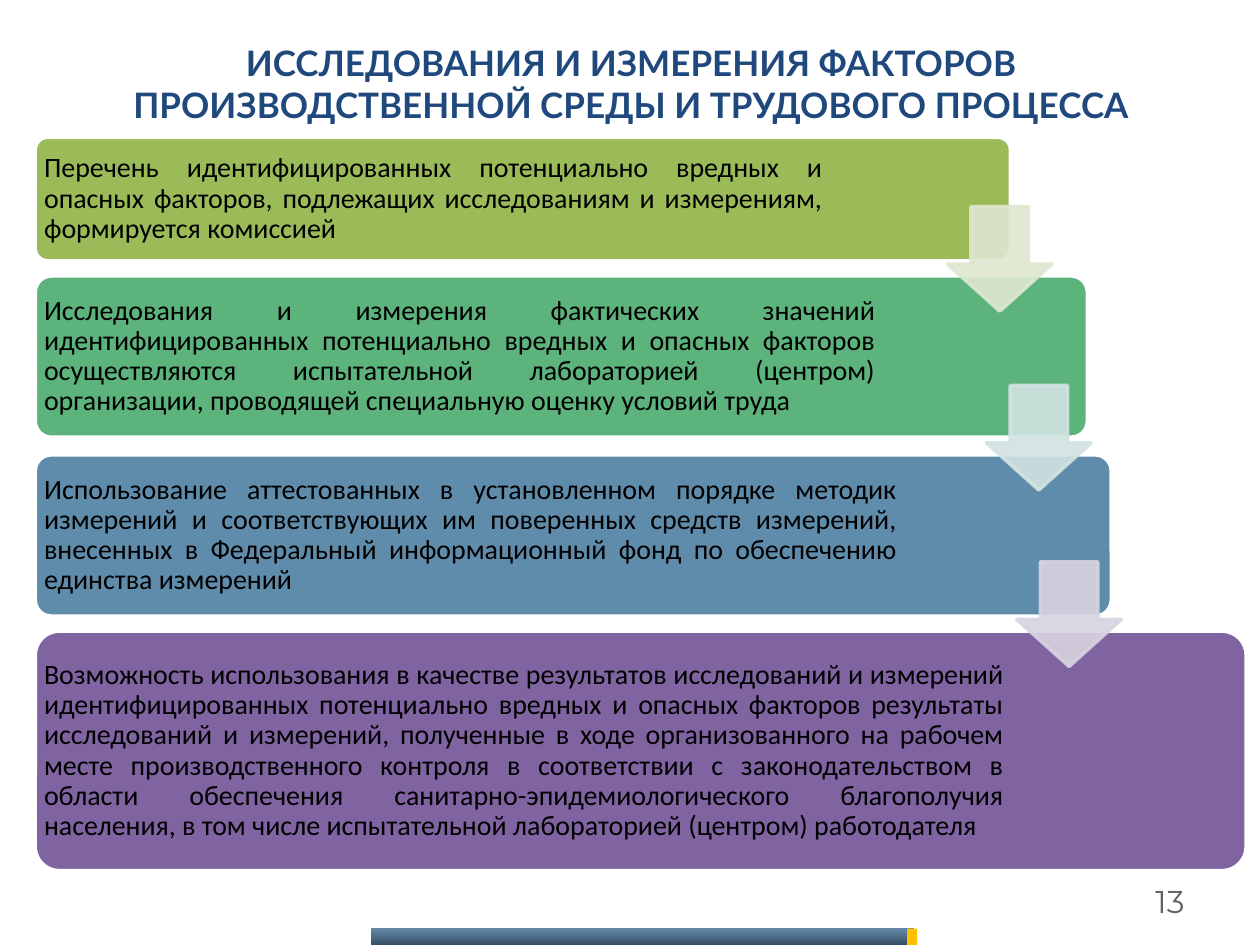
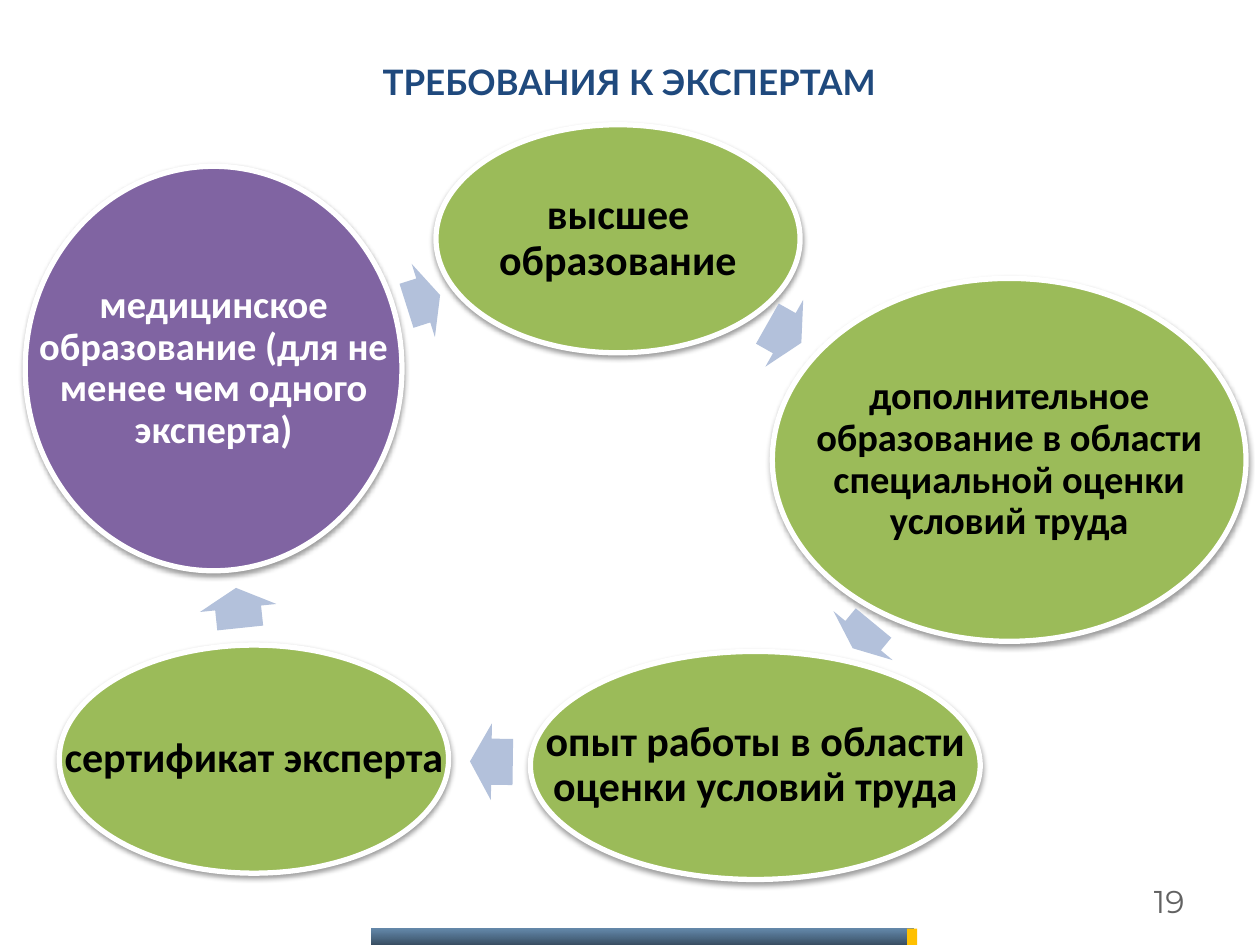
from lxml import etree
from pptx import Presentation
from pptx.dml.color import RGBColor
from pptx.enum.shapes import MSO_SHAPE
from pptx.enum.text import MSO_ANCHOR, MSO_AUTO_SIZE, PP_ALIGN
from pptx.oxml.ns import qn
from pptx.util import Inches, Pt

RECT, ROUND, OVAL = MSO_SHAPE.RECTANGLE, MSO_SHAPE.ROUNDED_RECTANGLE, MSO_SHAPE.OVAL
DOWN, RIGHT_ARROW = MSO_SHAPE.DOWN_ARROW, MSO_SHAPE.RIGHT_ARROW
MIDDLE = MSO_ANCHOR.MIDDLE
NO_FIT = MSO_AUTO_SIZE.NONE
CENTER, RIGHT, JUSTIFY = PP_ALIGN.CENTER, PP_ALIGN.RIGHT, PP_ALIGN.JUSTIFY

WHITE = RGBColor(0xFF, 0xFF, 0xFF)
BLACK = RGBColor(0, 0, 0)
NAVY = RGBColor(0x1F, 0x49, 0x7D)
GRAY = RGBColor(0x62, 0x62, 0x62)
YELLOW = RGBColor(0xFF, 0xC0, 0x00)
GREEN = RGBColor(0x9B, 0xBB, 0x59)
TEAL = RGBColor(0x5C, 0xB3, 0x7C)
BLUE = RGBColor(0x60, 0x8C, 0xAB)
PURPLE = RGBColor(0x80, 0x64, 0xA2)
PALE_GREEN = RGBColor(0xDE, 0xE7, 0xD1)
PALE_TEAL = RGBColor(0xD2, 0xE3, 0xE2)
PALE_PURPLE = RGBColor(0xD8, 0xD3, 0xE0)
PALE_BLUE = RGBColor(0xB3, 0xC1, 0xDB)
BAND_STOPS = [(RGBColor(0x00, 0x3C, 0x73), 60), (RGBColor(0x00, 0x1C, 0x35), 80)]

STEPS_TITLE = "ИССЛЕДОВАНИЯ И ИЗМЕРЕНИЯ ФАКТОРОВ ПРОИЗВОДСТВЕННОЙ СРЕДЫ И ТРУДОВОГО ПРОЦЕССА"
BAR_LEFT = 0.28
# top, bar width, text width, height, colour, text
STEPS = [
    (1.09, 7.74, 6.32, 0.98, GREEN,
     "Перечень идентифицированных потенциально вредных и опасных факторов, "
     "подлежащих исследованиям и измерениям, формируется комиссией"),
    (2.19, 8.35, 6.74, 1.28, TEAL,
     "Исследования и измерения фактических значений идентифицированных "
     "потенциально вредных и опасных факторов осуществляются испытательной "
     "лабораторией (центром) организации, проводящей специальную оценку условий труда"),
    (3.61, 8.54, 6.91, 1.28, BLUE,
     "Использование аттестованных в установленном порядке методик измерений и "
     "соответствующих им поверенных средств измерений, внесенных в Федеральный "
     "информационный фонд по обеспечению единства измерений"),
    (5.01, 9.61, 7.76, 1.9, PURPLE,
     "Возможность использования в качестве результатов исследований и измерений "
     "идентифицированных потенциально вредных и опасных факторов результаты "
     "исследований и измерений, полученные в ходе организованного на рабочем месте "
     "производственного контроля в соответствии с законодательством в области "
     "обеспечения санитарно-эпидемиологического благополучия населения, в том числе "
     "испытательной лабораторией (центром) работодателя"),
]
STEP_ARROWS = [(7.52, 1.64, PALE_GREEN), (7.83, 3.06, PALE_TEAL), (8.07, 4.46, PALE_PURPLE)]
STEP_ARROW_SIZE = 0.83

EXPERTS_TITLE = "ТРЕБОВАНИЯ К ЭКСПЕРТАМ"
# oval box, fill, text size, text colour, text, arrow (left, top, width, rotation)
REQUIREMENTS = [
    ((3.46, 0.99, 2.89, 1.81), GREEN, 24, BLACK, "высшее образование",
     (6.07, 2.34, 0.31, 29.5)),
    ((6.13, 2.21, 3.76, 2.88), GREEN, 22, BLACK,
     "дополнительное образование в области специальной оценки условий труда",
     (6.72, 4.74, 0.26, 129.6)),
    ((4.21, 5.17, 3.57, 1.81), GREEN, 24, BLACK,
     "опыт работы в области оценки условий труда",
     (3.73, 5.74, 0.34, 180.8)),
    ((0.47, 5.12, 3.09, 1.81), GREEN, 24, BLACK, "сертификат эксперта",
     (1.73, 4.52, 0.32, 264)),
    ((0.2, 1.32, 2.99, 3.21), PURPLE, 22, WHITE,
     "медицинское образование (для не менее чем одного эксперта)",
     (3.22, 2.08, 0.28, 342.4)),
]
CYCLE_ARROW_HEIGHT = 0.61


def inches(box):
    return [Inches(v) for v in box]


def set_alpha(parent, percent):
    for clr in parent.iter(qn("a:srgbClr")):
        etree.SubElement(clr, qn("a:alpha"), val=str(percent * 1000))


def add_shape(slide, kind, box, fill=None, line=None, width=0, adj=()):
    sp = slide.shapes.add_shape(kind, *inches(box))
    sp.shadow.inherit = False
    if fill is not None:
        sp.fill.solid()
        sp.fill.fore_color.rgb = fill
    if line is None:
        sp.line.fill.background()
    else:
        sp.line.color.rgb = line
        sp.line.width = Pt(width)
    for i, value in enumerate(adj):
        sp.adjustments[i] = value
    return sp


def add_soft_shadow(sp):
    effects = sp._element.spPr.find(qn("a:effectLst"))
    shadow = etree.SubElement(effects, qn("a:outerShdw"), blurRad=str(Pt(3.1)),
                              dist=str(Pt(1.6)), dir="5400000", rotWithShape="0")
    etree.SubElement(shadow, qn("a:srgbClr"), val=str(BLACK))
    set_alpha(shadow, 38)


def format_text(sp, text, font, size, color, align, bold=False, spacing=None, inset=None):
    tf = sp.text_frame
    tf.word_wrap = True
    tf.auto_size = NO_FIT
    tf.vertical_anchor = MIDDLE
    if inset is not None:
        tf.margin_left = tf.margin_right = tf.margin_top = tf.margin_bottom = Inches(inset)
    p = tf.paragraphs[0]
    p.text = text
    p.alignment = align
    p.line_spacing = spacing
    p.font.name = font
    p.font.size = Pt(size)
    p.font.bold = bold
    p.font.color.rgb = color


def add_text(slide, box, *args, **kwargs):
    format_text(slide.shapes.add_textbox(*inches(box)), *args, **kwargs)


def add_slide(prs, title, title_box, number):
    slide = prs.slides.add_slide(prs.slide_layouts[5])
    sp = slide.shapes.title
    sp.left, sp.top, sp.width, sp.height = inches(title_box)
    format_text(sp, title, "Lato", 20, NAVY, CENTER, bold=True)
    add_text(slide, (7.17, 6.95, 2.33, 0.4), number, "Montserrat", 18, GRAY, RIGHT)

    band = add_shape(slide, RECT, (2.95, 7.37, 4.3, 0.13))
    band.fill.gradient()
    band.fill.gradient_angle = 270
    for stop, (color, alpha) in zip(band.fill.gradient_stops, BAND_STOPS):
        stop.color.rgb = color
        set_alpha(stop._gs, alpha)
    add_shape(slide, RECT, (7.2, 7.37, 0.08, 0.13), YELLOW)
    return slide


def build_steps(prs):
    slide = add_slide(prs, STEPS_TITLE, (0.51, 0.28, 9, 0.77), "13")
    for top, bar_width, text_width, height, color, text in STEPS:
        add_shape(slide, ROUND, (BAR_LEFT, top, bar_width, height), color, WHITE, 2, [0.1])
        add_text(slide, (BAR_LEFT, top, text_width, height), text, "Calibri", 16, BLACK,
                 JUSTIFY, spacing=0.9, inset=0.07)
    for left, top, color in STEP_ARROWS:
        sp = add_shape(slide, DOWN, (left, top, STEP_ARROW_SIZE, STEP_ARROW_SIZE),
                       color, color, 2, [0.55, 0.45])
        set_alpha(sp._element.spPr, 90)


def build_experts(prs):
    slide = add_slide(prs, EXPERTS_TITLE, (0.27, 0.21, 9.45, 0.87), "19")
    for box, fill, size, color, text, (left, top, width, rotation) in REQUIREMENTS:
        add_soft_shadow(add_shape(slide, OVAL, box, fill, WHITE, 3))
        add_text(slide, box, text, "Calibri", size, color, CENTER,
                 bold=True, spacing=0.9, inset=0.03)
        arrow = add_shape(slide, RIGHT_ARROW, (left, top, width, CYCLE_ARROW_HEIGHT),
                          PALE_BLUE, adj=[0.6, 0.5])
        arrow.rotation = rotation


def main():
    prs = Presentation()
    prs.slide_width, prs.slide_height = Inches(10), Inches(7.5)
    build_steps(prs)
    build_experts(prs)
    prs.save("out.pptx")


if __name__ == "__main__":
    main()
